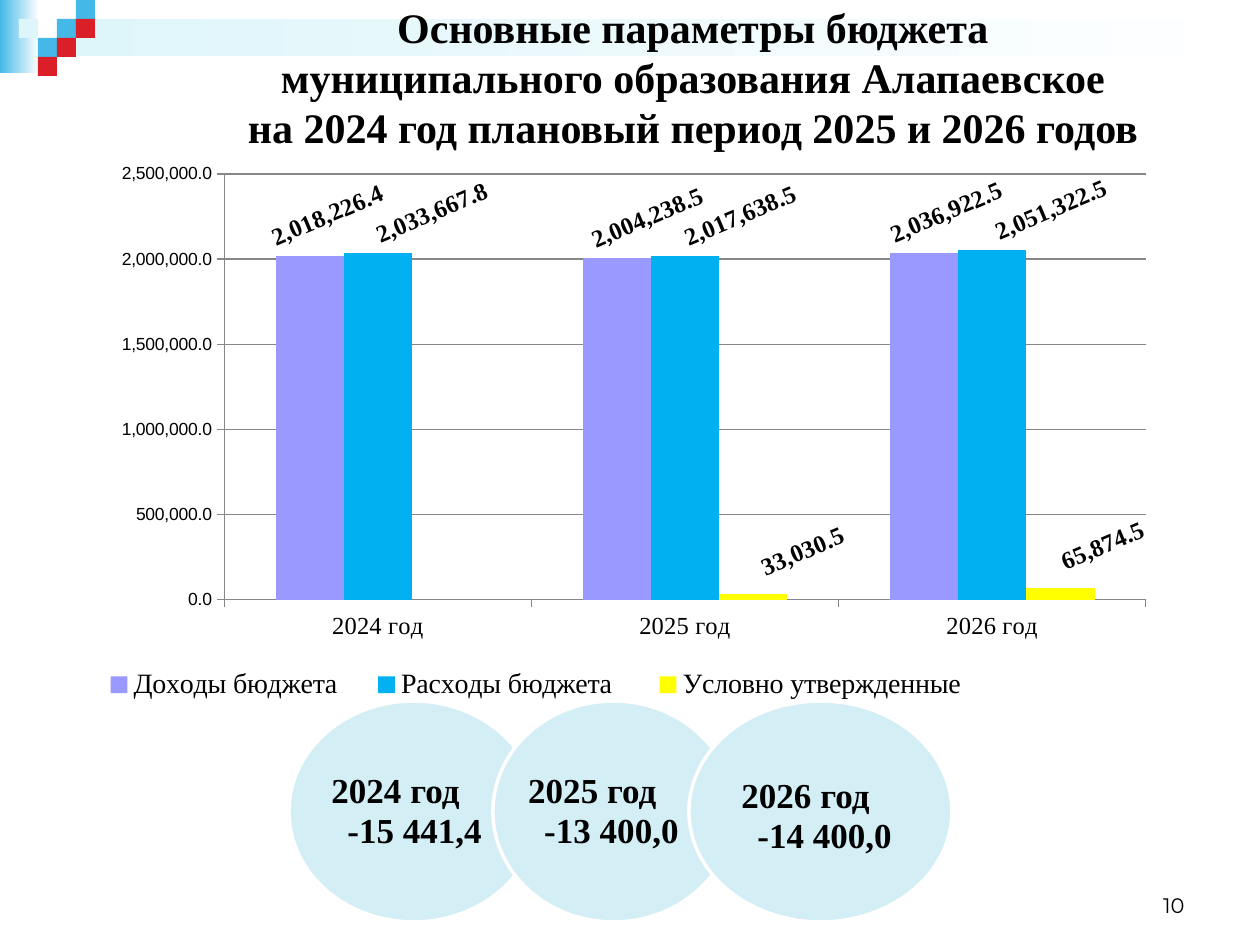
"""Build the budget parameters slide with its column chart and deficit circles."""
from lxml.etree import SubElement
from pptx import Presentation
from pptx.chart.data import CategoryChartData
from pptx.dml.color import RGBColor
from pptx.enum.chart import XL_CHART_TYPE, XL_LABEL_POSITION, XL_LEGEND_POSITION, XL_TICK_MARK
from pptx.enum.shapes import MSO_SHAPE
from pptx.enum.text import MSO_ANCHOR, MSO_AUTO_SIZE, PP_ALIGN
from pptx.oxml.ns import qn
from pptx.util import Pt

SCALE = 914400 / 126
SERIF = "Times New Roman"
COLORS = {name: RGBColor.from_string(value) for name, value in {
    "black": "000000", "white": "FFFFFF", "blue": "44B9E8", "red": "DA1F28",
    "pale": "DEF5FA", "circle": "D3EEF5", "grid": "878787",
    "income": "9999FF", "spending": "00B0F0", "conditional": "FFFF00"}.items()}


def emu(*lengths):
    return [round(length * SCALE) for length in lengths]


def set_layout(parent, index, **parts):
    for old in parent.findall(qn("c:layout")):
        parent.remove(old)
    layout = SubElement(parent, qn("c:layout"))
    manual = SubElement(layout, qn("c:manualLayout"))
    for name, value in parts.items():
        SubElement(manual, qn(f"c:{name}")).set("val", str(value))
    parent.insert(index, layout)


deck = Presentation()
deck.slide_width, deck.slide_height = emu(1260, 945)
page = deck.slides.add_slide(deck.slide_layouts[5])

for left, top, width, height, color in [(0, 0, 39, 73, "blue"), (57, 19, 1203, 37, "pale")]:
    band = page.shapes.add_shape(MSO_SHAPE.RECTANGLE, *emu(left, top, width, height))
    band.shadow.inherit = False
    band.line.fill.background()
    band.fill.gradient()
    band.fill.gradient_angle = 0
    for stop, name in zip(band.fill.gradient_stops, [color, "white"]):
        stop.color.rgb = COLORS[name]

for column, row, color in [(3, 1, "blue"), (4, 0, "blue"), (4, 1, "red"), (2, 2, "blue"),
                           (1, 1, "pale"), (3, 2, "red"), (2, 3, "red")]:
    square = page.shapes.add_shape(MSO_SHAPE.RECTANGLE, *emu(column * 19, row * 19, 19, 19))
    square.shadow.inherit = False
    square.line.fill.background()
    square.fill.solid()
    square.fill.fore_color.rgb = COLORS[color]

number = page.shapes.add_textbox(*emu(903, 861, 294, 63))
number.text_frame.word_wrap = True
number.text_frame.vertical_anchor = MSO_ANCHOR.BOTTOM
para = number.text_frame.paragraphs[0]
para.text = "10"
para.alignment = PP_ALIGN.RIGHT
para.font.name, para.font.size = "Montserrat", Pt(12)
para.font.color.rgb = COLORS["black"]

title = page.shapes.title
number._element.addnext(title._element)
title.left, title.top, title.width, title.height = emu(126, 0, 1134, 145)
frame = title.text_frame
frame.auto_size = MSO_AUTO_SIZE.NONE
frame.vertical_anchor = MSO_ANCHOR.TOP
frame.margin_top, frame.margin_bottom = emu(2, 0)
frame.text = ("Основные параметры бюджета\nмуниципального образования Алапаевское\n"
              "на 2024 год плановый период 2025 и 2026 годов")
for para in frame.paragraphs:
    para.alignment = PP_ALIGN.CENTER
    para.line_spacing = Pt(28.5)
    para.space_before = Pt(0)
    para.font.name, para.font.size, para.font.bold = SERIF, Pt(24), True
    para.font.color.rgb = COLORS["black"]

data = CategoryChartData(number_format="#,##0.0")
data.categories = ["2024 год", "2025 год", "2026 год"]
data.add_series("Доходы бюджета", [2018226.4, 2004238.5, 2036922.5])
data.add_series("Расходы бюджета ", [2033667.8, 2017638.5, 2051322.5])
data.add_series("Условно утвержденные", [None, 33030.5, 65874.5])
chart = page.shapes.add_chart(XL_CHART_TYPE.COLUMN_CLUSTERED, *emu(44, 155, 1171, 576), data).chart
chart.has_title = False
chart.font.name, chart.font.size = "Arial", Pt(10)
chart.font.color.rgb = COLORS["black"]

values, categories = chart.value_axis, chart.category_axis
values.minimum_scale, values.maximum_scale, values.major_unit = 0, 2500000, 500000
values.tick_labels.number_format = "#,##0.0"
values.tick_labels.number_format_is_linked = False
values.major_gridlines.format.line.color.rgb = COLORS["grid"]
categories.tick_labels.font.name, categories.tick_labels.font.size = SERIF, Pt(14)
for axis in (values, categories):
    axis.major_tick_mark = XL_TICK_MARK.OUTSIDE
    axis.format.line.color.rgb = COLORS["grid"]

chart.has_legend = True
legend = chart.legend
legend.position = XL_LEGEND_POSITION.BOTTOM
legend.include_in_layout = False
legend.font.name, legend.font.size = SERIF, Pt(16)
set_layout(legend._element, 1, xMode="edge", yMode="edge", x=0.03, y=0.88, w=0.78, h=0.08)
set_layout(chart._chartSpace.find(".//" + qn("c:plotArea")), 0, layoutTarget="inner",
           xMode="edge", yMode="edge", x=0.154, y=0.033, w=0.787, h=0.739)

plot = chart.plots[0]
plot.vary_by_categories = False
plot.gap_width, plot.overlap = 150, 0
label_shifts = [[(18, 0), (30, 0), (22, 0)], [(54, 0), (55, 0), (59, 0)],
                [None, (49, -8), (42, -8)]]
for series, color, shifts in zip(plot.series, ["income", "spending", "conditional"], label_shifts):
    series.format.fill.solid()
    series.format.fill.fore_color.rgb = COLORS[color]
    for index, shift in enumerate(shifts):
        if shift:
            label = series.points[index].data_label
            label.font.name, label.font.size, label.font.bold = SERIF, Pt(14), True
            label.position = XL_LABEL_POSITION.OUTSIDE_END
    for tag in series._element.iter(qn("c:dLbl")):
        across, down = shifts[int(tag.find(qn("c:idx")).get("val"))]
        set_layout(tag, 1, x=round(across / 1171, 3), y=round(down / 576, 3))
        tag.find(".//" + qn("a:bodyPr")).set("rot", str(-23 * 60000))

for left, width, inset, drop, year, balance in [
        (289, 249, 6, 0, "2024 год", "-15 441,4"),
        (493, 241, 0, 0, "2025 год", "-13 400,0"),
        (689, 263, 14, 10, "2026 год", "-14 400,0")]:
    circle = page.shapes.add_shape(MSO_SHAPE.OVAL, *emu(left, 701, width, 221))
    circle.shadow.inherit = False
    circle.fill.solid()
    circle.fill.fore_color.rgb = COLORS["circle"]
    circle.line.color.rgb = COLORS["white"]
    circle.line.width = Pt(2)
    frame = circle.text_frame
    frame.word_wrap = True
    frame.vertical_anchor = MSO_ANCHOR.MIDDLE
    frame.margin_left, frame.margin_top, frame.margin_right, frame.margin_bottom = emu(inset, drop, 0, 0)
    frame.text = f"{year}\n{balance}"
    for para in frame.paragraphs:
        para.alignment = PP_ALIGN.LEFT
        para.line_spacing = 0.95
        para.font.name, para.font.size, para.font.bold = SERIF, Pt(20), True
        para.font.color.rgb = COLORS["black"]
    frame.paragraphs[1]._p.get_or_add_pPr().set("marL", str(emu(16)[0]))

deck.save("out.pptx")
